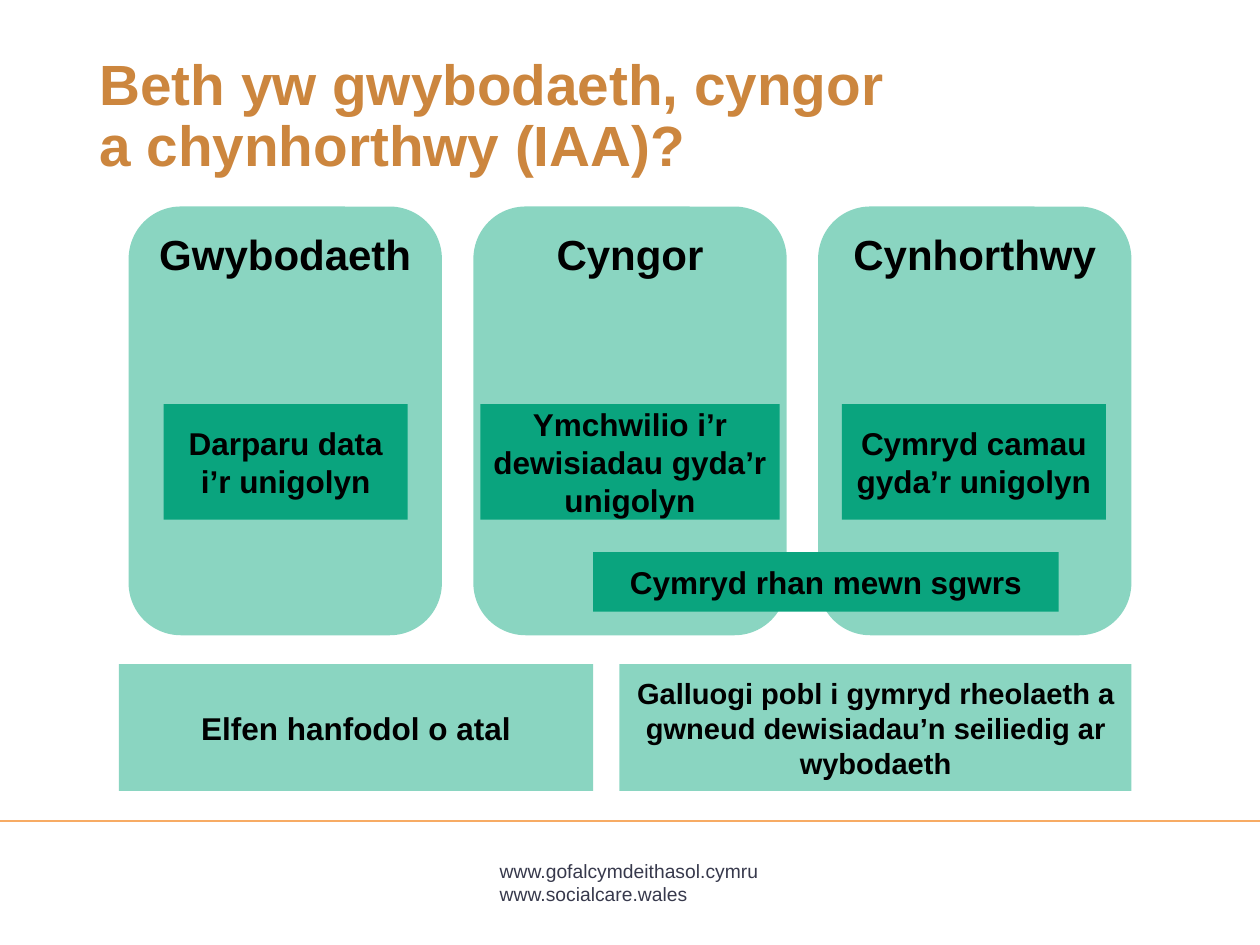
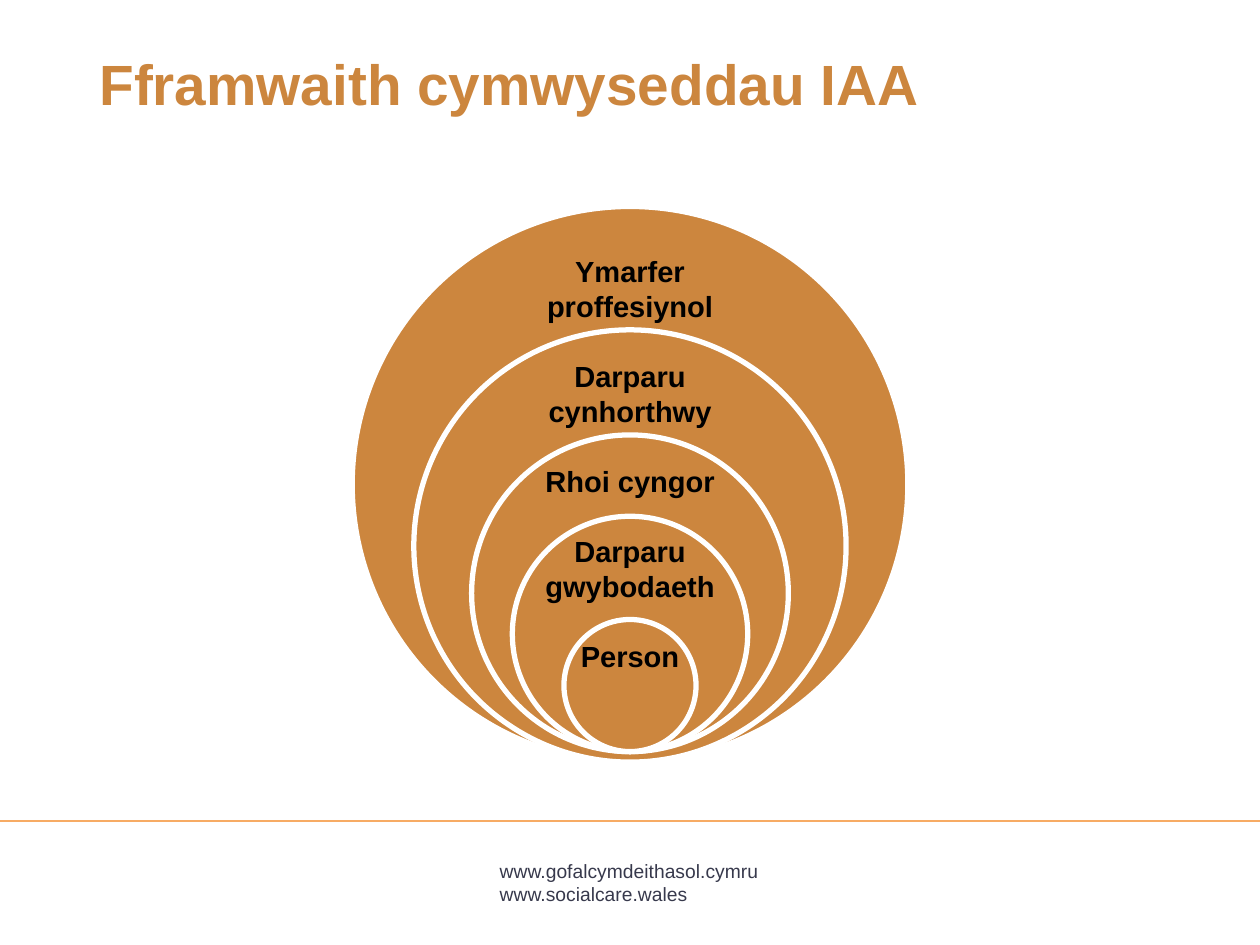
from dataclasses import dataclass

from lxml import etree
from pptx import Presentation
from pptx.dml.color import RGBColor
from pptx.enum.shapes import MSO_CONNECTOR, MSO_SHAPE
from pptx.enum.text import MSO_ANCHOR, PP_ALIGN
from pptx.oxml.ns import qn
from pptx.shapes.autoshape import Shape
from pptx.slide import Slide
from pptx.text.text import TextFrame
from pptx.util import Pt

RECT, ROUNDED, OVAL = MSO_SHAPE.RECTANGLE, MSO_SHAPE.ROUNDED_RECTANGLE, MSO_SHAPE.OVAL
TOP, MIDDLE = MSO_ANCHOR.TOP, MSO_ANCHOR.MIDDLE
LEFT, CENTER = PP_ALIGN.LEFT, PP_ALIGN.CENTER
STRAIGHT = MSO_CONNECTOR.STRAIGHT

WHITE = RGBColor(0xFF, 0xFF, 0xFF)
BLACK = RGBColor(0x00, 0x00, 0x00)
OCHRE = RGBColor(0xCC, 0x86, 0x3E)
RULE_ORANGE = RGBColor(0xF7, 0xAB, 0x64)
FOOTER_GREY = RGBColor(0x37, 0x39, 0x4C)
PALE_GREEN = RGBColor(0x16, 0xAD, 0x85)
DEEP_GREEN = RGBColor(0x0A, 0xA4, 0x7E)

FONT = "Arial"
SLIDE_WIDTH, SLIDE_HEIGHT = 720, 540
PALE_OPACITY = 50
FOOTER_LINES = ["www.gofalcymdeithasol.cymru", "www.socialcare.wales"]


@dataclass(frozen=True)
class Box:
    left: float
    top: float
    width: float
    height: float


@dataclass(frozen=True)
class TextStyle:
    size: float
    color: RGBColor = BLACK
    bold: bool = True
    align: PP_ALIGN = CENTER
    anchor: MSO_ANCHOR = MIDDLE
    line_spacing: float = 1.0
    space_before: float = 0


@dataclass(frozen=True)
class Panel:
    text: str
    box: Box
    style: TextStyle
    fill: RGBColor
    opacity: int = 100
    preset: MSO_SHAPE = RECT


@dataclass(frozen=True)
class Ring:
    diameter: float
    bottom: float


TITLE_STYLE = TextStyle(32.4, OCHRE, align=LEFT, anchor=TOP, line_spacing=0.9)
FOOTER_STYLE = TextStyle(11, FOOTER_GREY, bold=False, align=LEFT, anchor=TOP)
PILLAR_STYLE = TextStyle(24, anchor=TOP)
PANEL_STYLE = TextStyle(18)
SMALL_PANEL_STYLE = TextStyle(16.6)
RING_LABEL_STYLE = TextStyle(16.6, space_before=20)

PILLAR_NAMES = ["Gwybodaeth", "Cyngor", "Cynhorthwy"]
PILLAR_LEFT, PILLAR_PITCH = 73.5, 197
ACTION_TOP, ACTION_HEIGHT = 231, 66
OUTCOME_TOP, OUTCOME_HEIGHT = 379.5, 72.5

PILLARS = [
    Panel(name, Box(PILLAR_LEFT + i * PILLAR_PITCH, 118, 179, 245),
          PILLAR_STYLE, PALE_GREEN, PALE_OPACITY, ROUNDED)
    for i, name in enumerate(PILLAR_NAMES)
]
ACTIONS = [
    Panel(text, Box(left, ACTION_TOP, width, ACTION_HEIGHT), PANEL_STYLE, DEEP_GREEN)
    for text, left, width in [
        ("Darparu data i’r unigolyn", 93.5, 139.5),
        ("Ymchwilio i’r dewisiadau gyda’r unigolyn", 274.5, 171),
        ("Cymryd camau gyda’r unigolyn", 481, 151),
    ]
]
CONVERSATION = Panel("Cymryd rhan mewn sgwrs", Box(339, 315.5, 266, 34),
                     PANEL_STYLE, DEEP_GREEN)
OUTCOMES = [
    Panel(text, Box(left, OUTCOME_TOP, width, OUTCOME_HEIGHT), style,
          PALE_GREEN, PALE_OPACITY)
    for text, left, width, style in [
        ("Elfen hanfodol o atal", 68, 271, PANEL_STYLE),
        ("Galluogi pobl i gymryd rheolaeth a gwneud dewisiadau’n seiliedig ar wybodaeth",
         354, 292.5, SMALL_PANEL_STYLE),
    ]
]

RINGS = [Ring(317.5, 435.5), Ring(247, 435.5), Ring(181, 429.5),
         Ring(134.5, 429.5), Ring(75.5, 429.5)]
RING_LABELS = ["Ymarfer proffesiynol", "Darparu cynhorthwy", "Rhoi cyngor",
               "Darparu gwybodaeth", "Person"]


def write_text(frame: TextFrame, paragraphs: list[str], style: TextStyle) -> None:
    """Write the paragraphs; a newline inside one becomes a line break."""
    frame.word_wrap = True
    frame.vertical_anchor = style.anchor
    for i, text in enumerate(paragraphs):
        paragraph = frame.add_paragraph() if i else frame.paragraphs[0]
        paragraph.alignment = style.align
        paragraph.line_spacing = style.line_spacing
        if i:
            paragraph.space_before = Pt(style.space_before)
        for j, line in enumerate(text.split("\n")):
            if j:
                paragraph.add_line_break()
            run = paragraph.add_run()
            run.text = line
            run.font.name = FONT
            run.font.size = Pt(style.size)
            run.font.bold = style.bold
            run.font.color.rgb = style.color


def add_text(slide: Slide, box: Box, paragraphs: list[str], style: TextStyle) -> None:
    text_box = slide.shapes.add_textbox(
        Pt(box.left), Pt(box.top), Pt(box.width), Pt(box.height))
    write_text(text_box.text_frame, paragraphs, style)


def add_filled_shape(slide: Slide, preset: MSO_SHAPE, box: Box, fill: RGBColor) -> Shape:
    shape = slide.shapes.add_shape(
        preset, Pt(box.left), Pt(box.top), Pt(box.width), Pt(box.height))
    shape.shadow.inherit = False
    shape.fill.solid()
    shape.fill.fore_color.rgb = fill
    shape.line.fill.background()
    return shape


def set_opacity(shape: Shape, percent: int) -> None:
    color = shape.fill._xPr.find(f"{qn('a:solidFill')}/{qn('a:srgbClr')}")
    etree.SubElement(color, qn("a:alpha")).set("val", str(percent * 1000))


def add_panel(slide: Slide, panel: Panel) -> None:
    shape = add_filled_shape(slide, panel.preset, panel.box, panel.fill)
    if panel.opacity < 100:
        set_opacity(shape, panel.opacity)
    frame = shape.text_frame
    frame.margin_left = frame.margin_right = Pt(3.6)
    write_text(frame, [panel.text], panel.style)


def add_ring(slide: Slide, ring: Ring) -> None:
    box = Box((SLIDE_WIDTH - ring.diameter) / 2, ring.bottom - ring.diameter,
              ring.diameter, ring.diameter)
    circle = add_filled_shape(slide, OVAL, box, OCHRE)
    circle.line.color.rgb = WHITE
    circle.line.width = Pt(3)


def add_framed_slide(deck: Presentation, title: str) -> Slide:
    """Add a blank slide with the shared title, rule and footer."""
    slide = deck.slides.add_slide(deck.slide_layouts[6])
    add_text(slide, Box(278.5, 487.5, 163, 33), FOOTER_LINES, FOOTER_STYLE)
    rule = slide.shapes.add_connector(
        STRAIGHT, Pt(0), Pt(469.25), Pt(SLIDE_WIDTH), Pt(469.25))
    rule.line.color.rgb = RULE_ORANGE
    rule.line.width = Pt(1)
    etree.SubElement(rule._element.spPr, qn("a:effectLst"))
    add_text(slide, Box(49.75, 28.8, 483, 81.5), [title], TITLE_STYLE)
    return slide


def build_definition_slide(deck: Presentation) -> None:
    slide = add_framed_slide(deck, "Beth yw gwybodaeth, cyngor\na chynhorthwy (IAA)?")
    for panel in [*PILLARS, *ACTIONS, CONVERSATION, *OUTCOMES]:
        add_panel(slide, panel)


def build_framework_slide(deck: Presentation) -> None:
    slide = add_framed_slide(deck, "Fframwaith cymwyseddau IAA")
    for ring in RINGS:
        add_ring(slide, ring)
    add_text(slide, Box(301.5, 129, 117, 271.5), RING_LABELS, RING_LABEL_STYLE)


def main() -> None:
    deck = Presentation()
    deck.slide_width, deck.slide_height = Pt(SLIDE_WIDTH), Pt(SLIDE_HEIGHT)
    build_definition_slide(deck)
    build_framework_slide(deck)
    deck.save("out.pptx")


if __name__ == "__main__":
    main()
